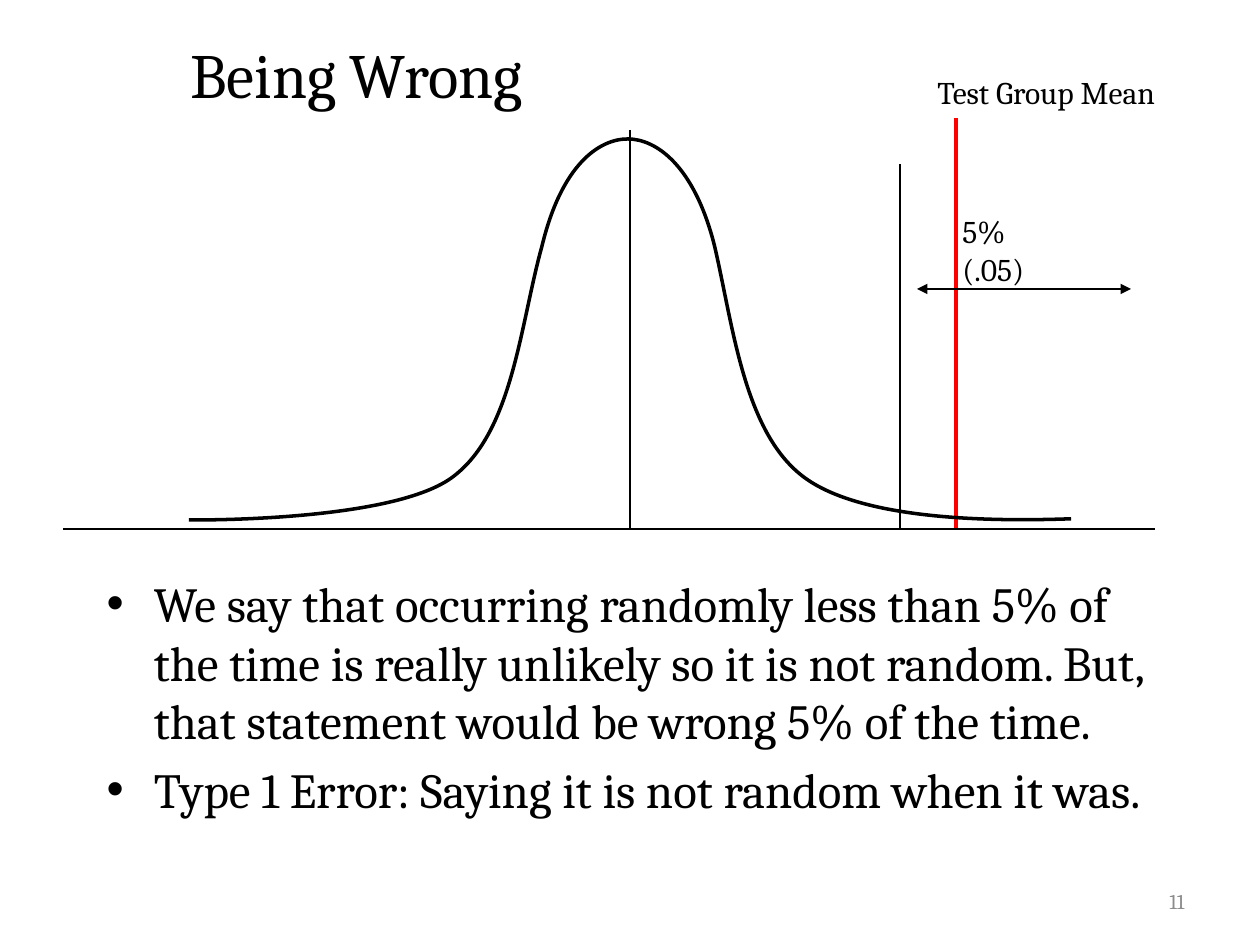
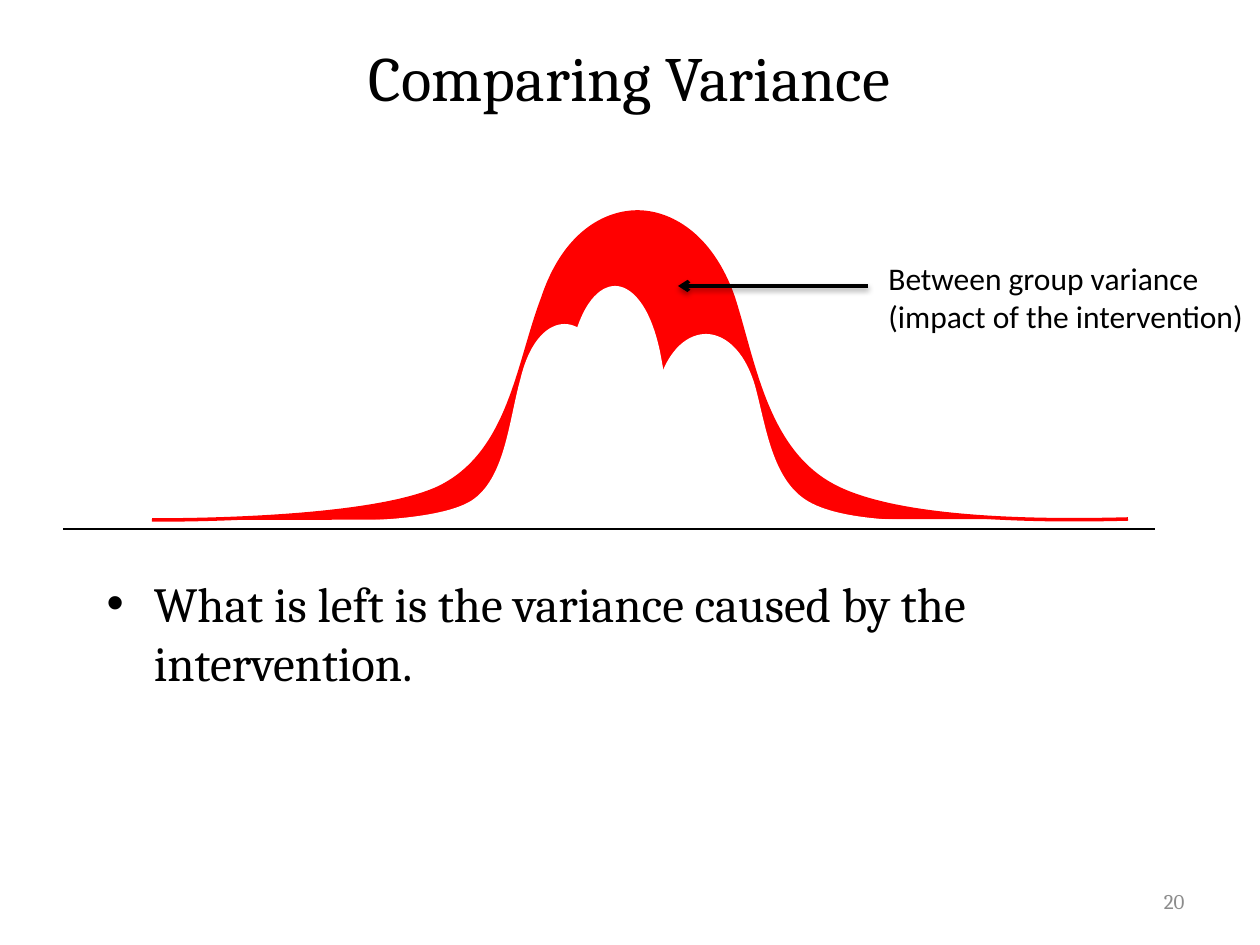
from collections import namedtuple
from dataclasses import dataclass

from lxml.etree import SubElement
from pptx import Presentation
from pptx.dml.color import RGBColor
from pptx.enum.shapes import MSO_CONNECTOR
from pptx.enum.text import MSO_ANCHOR, MSO_AUTO_SIZE, PP_ALIGN
from pptx.oxml.ns import qn
from pptx.util import Emu, Pt


@dataclass(frozen=True)
class Theme:
    ink: RGBColor = RGBColor(0, 0, 0)
    accent: RGBColor = RGBColor(255, 0, 0)
    paper: RGBColor = RGBColor(255, 255, 255)
    muted: RGBColor = RGBColor(0x8C, 0x8C, 0x8C)
    serif: str = "Cambria"
    sans: str = "Calibri"
    title: int = 36
    body: int = 28
    label: int = 18
    footer: int = 12
    thin: float = 0.75
    thick: float = 2


THEME = Theme()
Box = namedtuple("Box", "x y w h")

BODY = Box(94, 567, 1071, 284)
FOOTER = Box(903, 876, 294, 50)

BELL_START = (999, 997)
BELL_CURVES = [
    (924, 1003), (763, 1007), (695, 885),
    (628, 766), (616, 485), (595, 278),
    (572, 69), (529, 0), (497, 0),
    (464, 0), (422, 69), (400, 280),
    (375, 488), (367, 766), (300, 885),
    (233, 1007), (0, 1000), (0, 1000),
]


def px(n):
    return Emu(round(n * 914400 / 126))


def within(box, x, y, w=0, h=0):
    return Box(box.x + x, box.y + y, w, h)


def place(sp, box):
    sp.left, sp.top, sp.width, sp.height = map(px, box)


def style(p, size, color=THEME.ink, name=THEME.serif):
    p.font.size = Pt(size)
    p.font.color.rgb = color
    p.font.name = name


def add_text(s, box, text, size=THEME.label, color=THEME.ink,
             name=THEME.serif, wrap=False):
    sp = s.shapes.add_textbox(*map(px, box))
    tf = sp.text_frame
    tf.text = text
    tf.word_wrap = wrap
    tf.auto_size = MSO_AUTO_SIZE.NONE if wrap else MSO_AUTO_SIZE.SHAPE_TO_FIT_TEXT
    style(tf.paragraphs[0], size, color, name)
    return tf


def add_line(s, box, start, end, color=THEME.ink, width=THEME.thin,
             head=None, tail=None, shadow=False):
    a, b = within(box, *start), within(box, *end)
    sp = s.shapes.add_connector(MSO_CONNECTOR.STRAIGHT,
                                px(a.x), px(a.y), px(b.x), px(b.y))
    sp.line.color.rgb = color
    sp.line.width = Pt(width)
    ln = sp.line._get_or_add_ln()
    for tag, kind in (("a:headEnd", head), ("a:tailEnd", tail)):
        if kind:
            SubElement(ln, qn(tag), type=kind)
    effects = SubElement(ln.getparent(), qn("a:effectLst"))
    if shadow:
        outer = SubElement(effects, qn("a:outerShdw"), blurRad="40000",
                           dist="20000", dir="5400000", rotWithShape="0")
        clr = SubElement(outer, qn("a:srgbClr"), val=str(THEME.ink))
        SubElement(clr, qn("a:alpha"), val="38000")


def curve_segments(sp):
    segments = list(sp._element.iter(qn("a:lnTo")))
    outline = segments[0].getparent()
    for i in range(0, len(segments), 3):
        curve = SubElement(outline, qn("a:cubicBezTo"))
        for segment in segments[i:i + 3]:
            curve.append(segment[0])
            outline.remove(segment)


def add_bell(s, box, fill=None, line=None):
    def scaled(point):
        return (px(box.x + box.w * point[0] / 1000),
                px(box.y + box.h * point[1] / 1000))

    fb = s.shapes.build_freeform(*scaled(BELL_START))
    fb.add_line_segments([scaled(point) for point in BELL_CURVES], close=False)
    sp = fb.convert_to_shape()
    curve_segments(sp)
    sp.shadow.inherit = False
    if fill is None:
        sp.fill.background()
    else:
        sp.fill.solid()
        sp.fill.fore_color.rgb = fill
    if line is None:
        sp.line.fill.background()
    else:
        sp.line.color.rgb = line
        sp.line.width = Pt(THEME.thick)


def add_axis(s, box):
    add_line(s, box, (0, box.h), (box.w, box.h))


def draw_error_region(s, box):
    base = box.h
    add_line(s, box, (893, base), (893, 51), THEME.accent, THEME.thick)
    add_text(s, within(box, 862, 0, 248, 50), "Test Group Mean")
    add_line(s, box, (567, 63), (567, base))
    add_axis(s, box)
    add_line(s, box, (837, base), (837, 97))
    add_line(s, box, (854, 222), (1068, 222), head="triangle", tail="triangle")
    add_text(s, within(box, 887, 139, 125, 50), "5% (.05)", wrap=True)
    add_bell(s, within(box, 126, 72, 883, 381), line=THEME.ink)


def draw_variance(s, box):
    add_axis(s, box)
    add_bell(s, within(box, 89, 0, 977, 308), THEME.accent, THEME.accent)
    for x, y, w in ((275, 112, 456), (325, 74, 457), (394, 122, 501)):
        add_bell(s, within(box, x, y, w, 309 - y), THEME.paper)
    add_text(s, within(box, 813, 41, 384, 89),
             "Between group variance\v(impact of the intervention)", name=THEME.sans)
    add_line(s, box, (805, 74), (615, 74), width=THEME.thick,
             tail="arrow", shadow=True)


def add_bullets(s, box, items):
    sp = s.placeholders[1]
    place(sp, box)
    tf = sp.text_frame
    tf.text = "\n".join(items)
    for i, p in enumerate(tf.paragraphs):
        p.space_before = Pt(THEME.body * 0.2 if i else 0)
        style(p, THEME.body)


def add_slide(prs, title, title_box, items, number, draw, chart_box):
    s = prs.slides.add_slide(prs.slide_layouts[1])
    place(s.shapes.title, title_box)
    tf = s.shapes.title.text_frame
    tf.text = title
    tf.vertical_anchor = MSO_ANCHOR.MIDDLE
    tf.paragraphs[0].alignment = PP_ALIGN.CENTER
    style(tf.paragraphs[0], THEME.title)
    add_bullets(s, BODY, items)
    draw(s, chart_box)
    tf = add_text(s, FOOTER, number, THEME.footer, THEME.muted, wrap=True)
    tf.vertical_anchor = MSO_ANCHOR.MIDDLE
    tf.paragraphs[0].alignment = PP_ALIGN.RIGHT


def main():
    prs = Presentation()
    prs.slide_width, prs.slide_height = px(1260), px(945)
    add_slide(prs, "Being Wrong", Box(-179, 10, 1071, 126), [
        "We say that occurring randomly less than 5% of the time is really unlikely "
        "so it is not random. But, that statement would be wrong 5% of the time.",
        "Type 1 Error: Saying it is not random when it was.",
    ], "11", draw_error_region, Box(63, 67, 1092, 462))
    add_slide(prs, "Comparing Variance", Box(94, 13, 1071, 126), [
        "What is left is the variance caused by the intervention.",
    ], "20", draw_variance, Box(63, 212, 1092, 317))
    prs.save("out.pptx")


if __name__ == "__main__":
    main()
